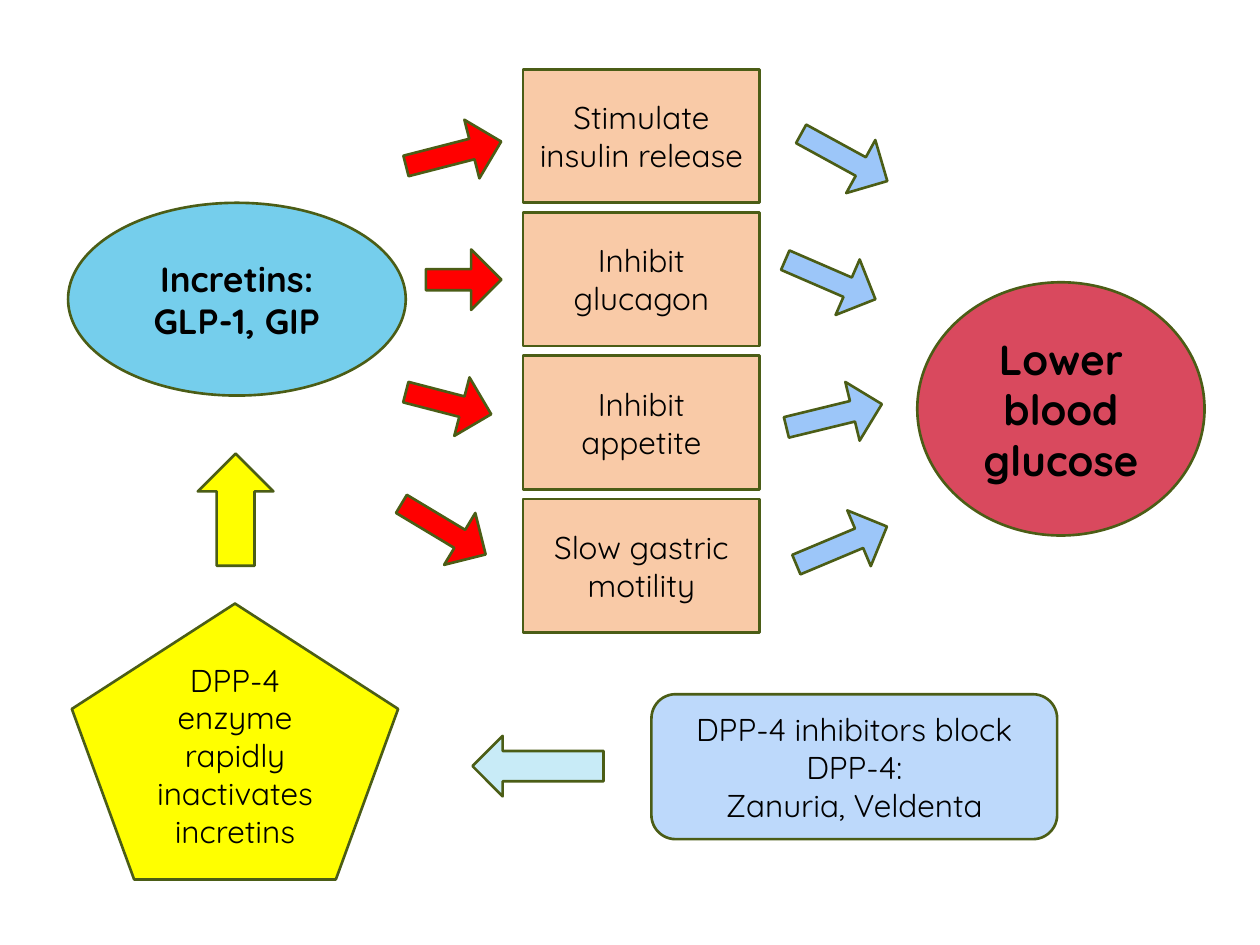
from pptx import Presentation
from pptx.dml.color import RGBColor
from pptx.enum.shapes import MSO_SHAPE
from pptx.enum.text import MSO_ANCHOR, PP_ALIGN
from pptx.util import Inches, Pt

RECTANGLE = MSO_SHAPE.RECTANGLE
ROUNDED = MSO_SHAPE.ROUNDED_RECTANGLE
OVAL = MSO_SHAPE.OVAL
CIRCLE = MSO_SHAPE.FLOWCHART_CONNECTOR
PENTAGON = MSO_SHAPE.REGULAR_PENTAGON
RIGHT_ARROW = MSO_SHAPE.RIGHT_ARROW
UP_ARROW = MSO_SHAPE.UP_ARROW
LEFT_ARROW = MSO_SHAPE.LEFT_ARROW
MIDDLE = MSO_ANCHOR.MIDDLE
CENTER = PP_ALIGN.CENTER

COLORS = {
    "outline": "4B5D16",
    "text": "000000",
    "effect": "F9CAA7",
    "incretins": "75CEEC",
    "glucose": "D9495E",
    "enzyme": "FFFF00",
    "inhibitors": "BDD9FB",
    "action": "FF0000",
    "result": "9CC6F9",
    "block": "C8EBF7",
}
BLANK_LAYOUT = 6
ARROW_HEIGHT = 0.48

EFFECTS = [
    "Stimulate insulin release",
    "Inhibit glucagon",
    "Inhibit appetite",
    "Slow gastric motility",
]
EFFECT_TOP, EFFECT_PITCH = 0.55, 1.137

ACTION_ARROWS = [
    (3.21, 0.98, 0.78, -14.4),
    (3.38, 1.98, 0.6, 0),
    (3.21, 2.96, 0.7, 14.5),
    (3.13, 3.96, 0.78, 31),
]
RESULT_ARROWS = [
    (6.31, 1.01, 0.78, 28.7),
    (6.2, 1.98, 0.78, 23.4),
    (6.23, 3.06, 0.78, -13.7),
    (6.29, 4.09, 0.78, -22.8),
]


class Diagram:
    font = "Quicksand"
    line_width = Pt(1.5)

    def __init__(self, slide):
        self.slide = slide

    def shape(self, kind, left, top, width, height, color):
        shape = self.slide.shapes.add_shape(
            kind, Inches(left), Inches(top), Inches(width), Inches(height))
        shape.shadow.inherit = False
        shape.fill.solid()
        shape.fill.fore_color.rgb = RGBColor.from_string(COLORS[color])
        shape.line.color.rgb = RGBColor.from_string(COLORS["outline"])
        shape.line.width = self.line_width
        return shape

    def node(self, kind, left, top, width, height, color, text, size=18, bold=False):
        node = self.shape(kind, left, top, width, height, color)
        frame = node.text_frame
        frame.text = text
        frame.word_wrap = True
        frame.vertical_anchor = MIDDLE
        for paragraph in frame.paragraphs:
            paragraph.alignment = CENTER
            for run in paragraph.runs:
                run.font.name = self.font
                run.font.size = Pt(size)
                run.font.bold = bold
                run.font.color.rgb = RGBColor.from_string(COLORS["text"])
        return node

    def slanted_arrow(self, left, top, width, angle, color):
        arrow = self.shape(RIGHT_ARROW, left, top, width, ARROW_HEIGHT, color)
        arrow.adjustments[0] = 0.35
        arrow.rotation = angle


def main():
    prs = Presentation()
    prs.slide_width, prs.slide_height = Inches(10), Inches(7.5)
    diagram = Diagram(prs.slides.add_slide(prs.slide_layouts[BLANK_LAYOUT]))

    for row, effect in enumerate(EFFECTS):
        diagram.node(RECTANGLE, 4.15, EFFECT_TOP + row * EFFECT_PITCH,
                     1.88, 1.06, "effect", effect)

    diagram.node(OVAL, 0.54, 1.61, 2.68, 1.53, "incretins",
                 "Incretins:\nGLP-1, GIP", size=20, bold=True)
    diagram.node(CIRCLE, 7.28, 2.24, 2.28, 2.01, "glucose",
                 "Lower blood glucose", size=24, bold=True)
    enzyme = diagram.node(PENTAGON, 0.57, 4.79, 2.59, 2.19, "enzyme",
                          "DPP-4 enzyme\nrapidly inactivates incretins")
    enzyme.text_frame.margin_bottom = Inches(0.35)
    diagram.node(ROUNDED, 5.17, 5.51, 3.22, 1.15, "inhibitors",
                 "DPP-4 inhibitors block DPP-4:\nZanuria, Veldenta")

    for color, arrows in (("action", ACTION_ARROWS), ("result", RESULT_ARROWS)):
        for left, top, width, angle in arrows:
            diagram.slanted_arrow(left, top, width, angle, color)

    diagram.shape(UP_ARROW, 1.57, 3.6, 0.6, 0.89, "enzyme")
    diagram.shape(LEFT_ARROW, 3.75, 5.84, 1.04, ARROW_HEIGHT, "block")

    prs.save("out.pptx")


if __name__ == "__main__":
    main()
